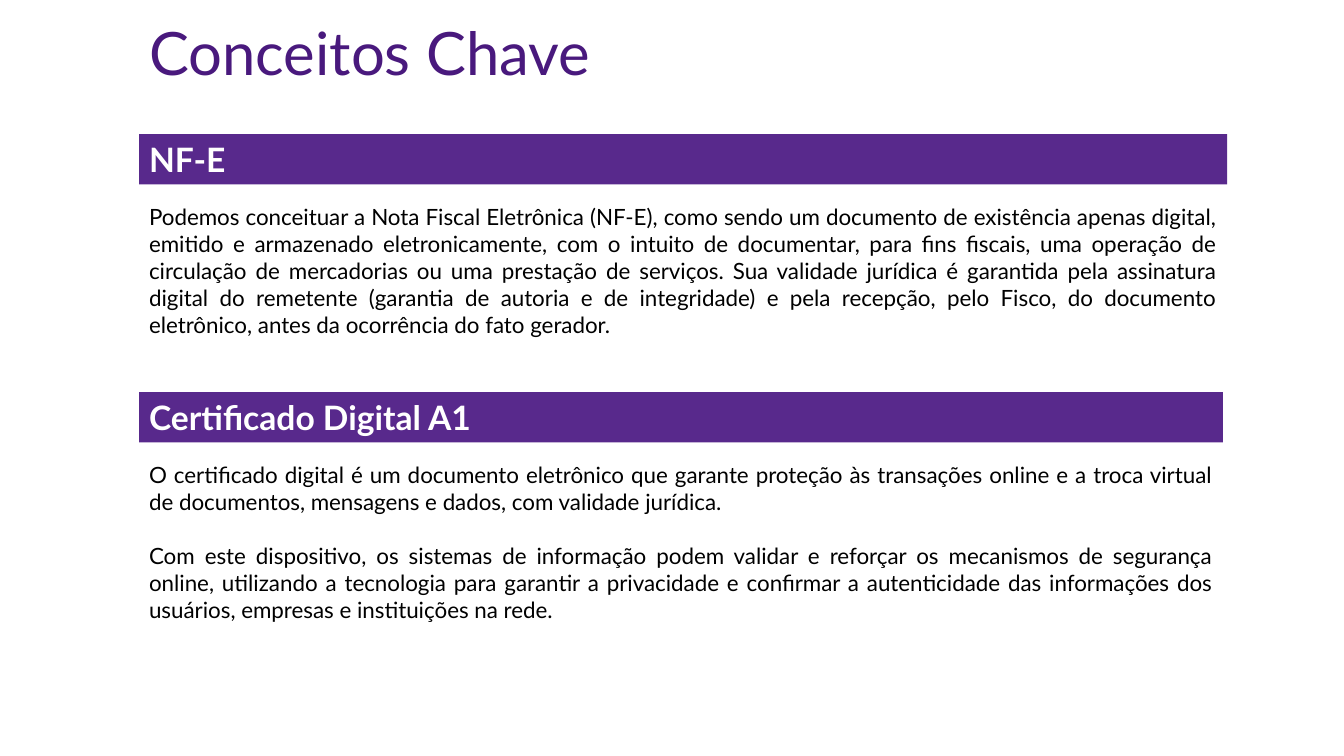
"""Build the slide of key concepts on electronic invoices."""
from pptx import Presentation
from pptx.dml.color import RGBColor
from pptx.enum import shapes, text
from pptx.util import Inches, Pt

TITLE = "Conceitos Chave"
PARTS = [
    (1.33, 10.79, 1.18, "NF-E", [
        "Podemos conceituar a Nota Fiscal Eletrônica (NF-E), como sendo um documento de existência apenas digital, emitido e armazenado eletronicamente, com o intuito de documentar, para fins fiscais, uma operação de circulação de mercadorias ou uma prestação de serviços. Sua validade jurídica é garantida pela assinatura digital do remetente (garantia de autoria e de integridade) e pela recepção, pelo Fisco, do documento eletrônico, antes da ocorrência do fato gerador.",
    ]),
    (3.89, 10.75, 1.72, "Certificado Digital A1", [
        "O certificado digital é um documento eletrônico que garante proteção às transações online e a troca virtual de documentos, mensagens e dados, com validade jurídica.",
        "Com este dispositivo, os sistemas de informação podem validar e reforçar os mecanismos de segurança online, utilizando a tecnologia para garantir a privacidade e confirmar a autenticidade das informações dos usuários, empresas e instituições na rede.",
    ]),
]
HUES = {"title": "49197D", "bar": "58298C", "light": "FFFFFF", "body": "000000"}
LEFT, BAR, STEP = 1.38, 0.5, 0.64


def hue(name):
    return RGBColor.from_string(HUES[name])


def write(shape, lines, size, color, align, bold=False, gap=0):
    frame = shape.text_frame
    frame.word_wrap = True
    frame.auto_size = text.MSO_AUTO_SIZE.NONE
    frame.text = "\n".join(lines)
    for i, para in enumerate(frame.paragraphs):
        para.alignment = align
        para.space_before = Pt(gap if i else 0)
        para.font.name = "Lato"
        para.font.size = Pt(size)
        para.font.bold = bold
        para.font.color.rgb = hue(color)


def place(shape, *box):
    shape.left, shape.top, shape.width, shape.height = map(Inches, box)


def main():
    deck = Presentation()
    deck.slide_width, deck.slide_height = Inches(13.33), Inches(7.5)
    slide = deck.slides.add_slide(deck.slide_layouts[5])
    left, just = text.PP_ALIGN.LEFT, text.PP_ALIGN.JUSTIFY

    title = slide.shapes.title
    place(title, LEFT, 0.11, 11.3, 0.95)
    write(title, [TITLE], 42.7, "title", left)
    title.text_frame.vertical_anchor = text.MSO_ANCHOR.TOP

    for top, width, height, head, lines in PARTS:
        box = [Inches(n) for n in (LEFT, top, width, BAR)]
        bar = slide.shapes.add_shape(shapes.MSO_SHAPE.RECTANGLE, *box)
        bar.shadow.inherit = False
        bar.fill.solid()
        bar.fill.fore_color.rgb = hue("bar")
        bar.line.fill.background()
        write(bar, [head], 24, "light", left, bold=True)
        bar.text_frame.vertical_anchor = text.MSO_ANCHOR.TOP

        box = [Inches(n) for n in (LEFT, top + STEP, width, height)]
        body = slide.shapes.add_textbox(*box)
        write(body, lines, 16, "body", just, gap=19.2)

    deck.save("out.pptx")


if __name__ == "__main__":
    main()
